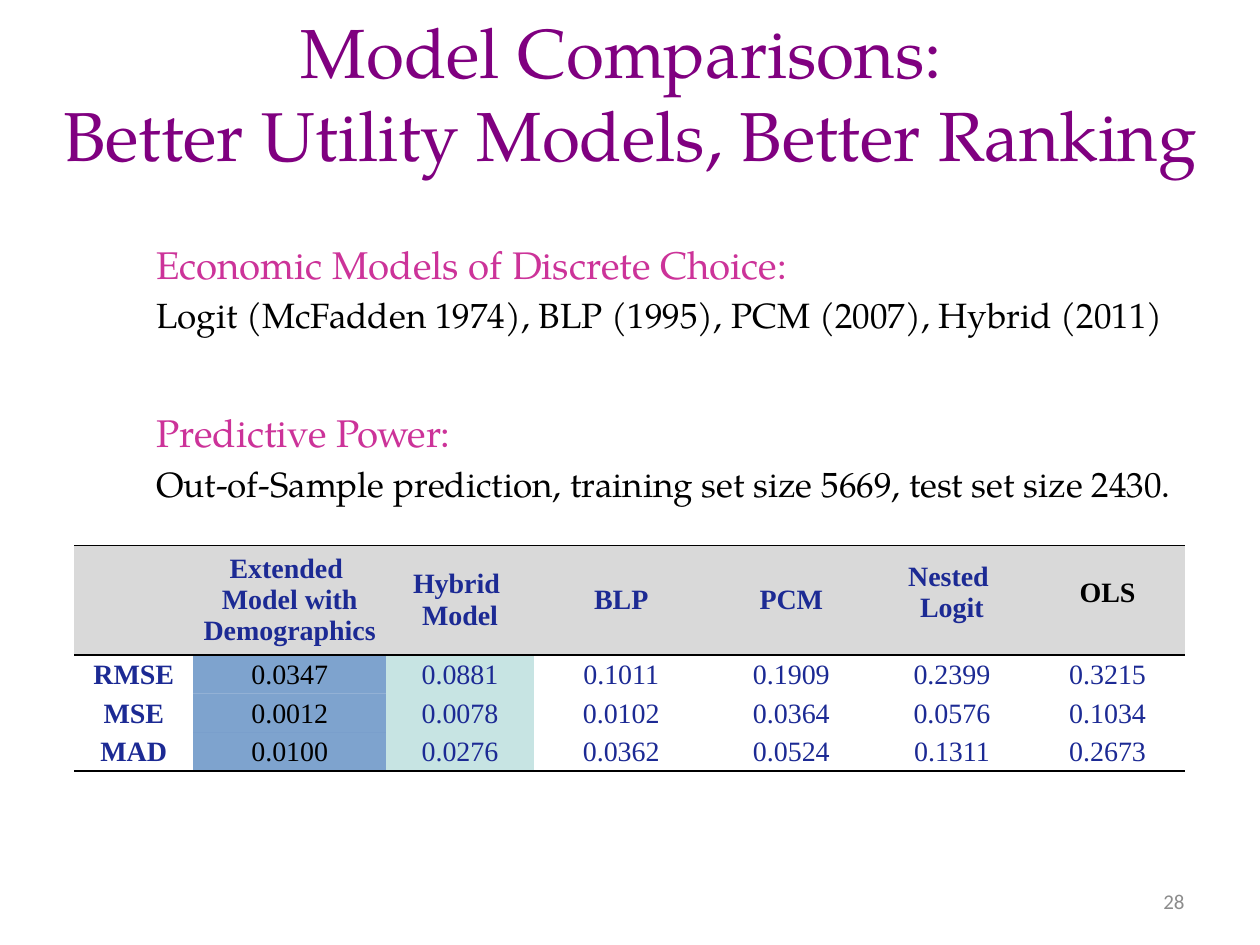
from dataclasses import dataclass

from lxml.etree import SubElement
from pptx import Presentation
from pptx.dml.color import RGBColor
from pptx.enum.text import MSO_ANCHOR, PP_ALIGN
from pptx.oxml.ns import qn
from pptx.util import Pt


@dataclass(frozen=True)
class Theme:
    serif: str = "TeX Gyre Pagella"
    table_font: str = "Times New Roman"
    number_font: str = "Calibri"
    purple: str = "800080"
    pink: str = "CC3399"
    navy: str = "1C2A94"
    black: str = "000000"
    gray: str = "8C8C8C"
    header_fill: str = "D9D9D9"
    extended_fill: str = "4F81BD"
    hybrid_fill: str = "C7E4E3"
    title_size: float = 39.6
    heading_size: float = 22
    body_size: float = 20
    table_size: float = 16
    number_size: float = 12


theme = Theme()


def style_paragraph(paragraph, font_name, size, color, align=PP_ALIGN.LEFT, bold=False):
    paragraph.alignment = align
    for run in paragraph.runs:
        run.font.name = font_name
        run.font.size = Pt(size)
        run.font.bold = bold
        run.font.color.rgb = RGBColor.from_string(color)


def set_borders(cell, ruled_sides):
    properties = cell._tc.get_or_add_tcPr()
    for position, side in enumerate(("lnL", "lnR", "lnT", "lnB")):
        line = SubElement(properties, qn(f"a:{side}"), w=str(Pt(1)))
        if side in ruled_sides:
            color = SubElement(line, qn("a:solidFill"))
            SubElement(color, qn("a:srgbClr"), val=theme.black)
        else:
            SubElement(line, qn("a:noFill"))
        properties.insert(position, line)


presentation = Presentation()
presentation.slide_width, presentation.slide_height = Pt(720), Pt(540)
slide = presentation.slides.add_slide(presentation.slide_layouts[6])

title = slide.shapes.add_textbox(Pt(0), Pt(0), Pt(720), Pt(105.84)).text_frame
title.word_wrap = True
title.vertical_anchor = MSO_ANCHOR.MIDDLE
title.text = "Model Comparisons: \vBetter Utility Models, Better Ranking"
style_paragraph(title.paragraphs[0], theme.serif, theme.title_size, theme.purple, PP_ALIGN.CENTER)

page_number = slide.shapes.add_textbox(Pt(516.24), Pt(500.4), Pt(167.76), Pt(28.8)).text_frame
page_number.word_wrap = True
page_number.vertical_anchor = MSO_ANCHOR.MIDDLE
page_number.text = "28"
style_paragraph(page_number.paragraphs[0], theme.number_font, theme.number_size, theme.gray, PP_ALIGN.RIGHT)

headers = ["", "Extended \nModel with Demographics", "Hybrid \nModel", "BLP", "PCM", "Nested \nLogit", "OLS"]
results = [
    ["RMSE", "0.0347", "0.0881", "0.1011", "0.1909", "0.2399", "0.3215"],
    ["MSE", "0.0012", "0.0078", "0.0102", "0.0364", "0.0576", "0.1034"],
    ["MAD", "0.0100", "0.0276", "0.0362", "0.0524", "0.1311", "0.2673"],
]
column_widths = [67.9, 110.4, 84.2, 100.1, 94.3, 89.3, 88.6]
row_heights = [62.6, 20.4, 20.4, 20.4]
header_offsets = {"Nested \nLogit": 9.2, "OLS": 18.4}
column_fills = {1: theme.extended_fill, 2: theme.hybrid_fill}
row_rules = [("lnT", "lnB"), ("lnT",), (), ("lnB",)]

comparison = slide.shapes.add_table(
    4, 7, Pt(42.48), Pt(311.6), Pt(sum(column_widths)), Pt(sum(row_heights))
).table
comparison.first_row = comparison.horz_banding = False
for column, width in zip(comparison.columns, column_widths):
    column.width = Pt(width)

for row_index, values in enumerate([headers, *results]):
    comparison.rows[row_index].height = Pt(row_heights[row_index])
    is_header = row_index == 0
    for column_index, value in enumerate(values):
        cell = comparison.cell(row_index, column_index)
        cell.margin_left = cell.margin_right = Pt(5)
        cell.margin_top = Pt(header_offsets.get(value, 0))
        cell.margin_bottom = Pt(0)
        centered = is_header and value not in header_offsets
        cell.vertical_anchor = MSO_ANCHOR.MIDDLE if centered else MSO_ANCHOR.TOP
        cell.text_frame.text = value
        is_black = value == "OLS" or (column_index == 1 and not is_header)
        for paragraph in cell.text_frame.paragraphs:
            style_paragraph(
                paragraph, theme.table_font, theme.table_size,
                theme.black if is_black else theme.navy,
                PP_ALIGN.CENTER, is_header or column_index == 0,
            )
            if not is_header:
                paragraph.line_spacing = 1.15
                paragraph.space_before = paragraph.space_after = Pt(2)
        fill_color = theme.header_fill if is_header else column_fills.get(column_index)
        if fill_color:
            cell.fill.solid()
            cell.fill.fore_color.rgb = RGBColor.from_string(fill_color)
        else:
            cell.fill.background()
        if fill_color == theme.extended_fill:
            tint = cell._tc.tcPr.find(".//" + qn("a:srgbClr"))
            SubElement(tint, qn("a:alpha"), val="73000")
        set_borders(cell, row_rules[row_index])

sections = [
    (133.92, "Economic Models of Discrete Choice:",
     "Logit (McFadden 1974), BLP (1995), PCM (2007), Hybrid (2011)"),
    (230.4, "Predictive Power:",
     "Out-of-Sample prediction, training set size 5669, test set size 2430."),
]
for top, heading, detail in sections:
    section = slide.shapes.add_textbox(Pt(82.08), Pt(top), Pt(595.44), Pt(63.36)).text_frame
    section.word_wrap = True
    section.text = f"{heading}\n{detail}"
    heading_line, detail_line = section.paragraphs
    style_paragraph(heading_line, theme.serif, theme.heading_size, theme.pink)
    style_paragraph(detail_line, theme.serif, theme.body_size, theme.black)
    for line in section.paragraphs:
        line.space_before = Pt(4)

presentation.save("out.pptx")
